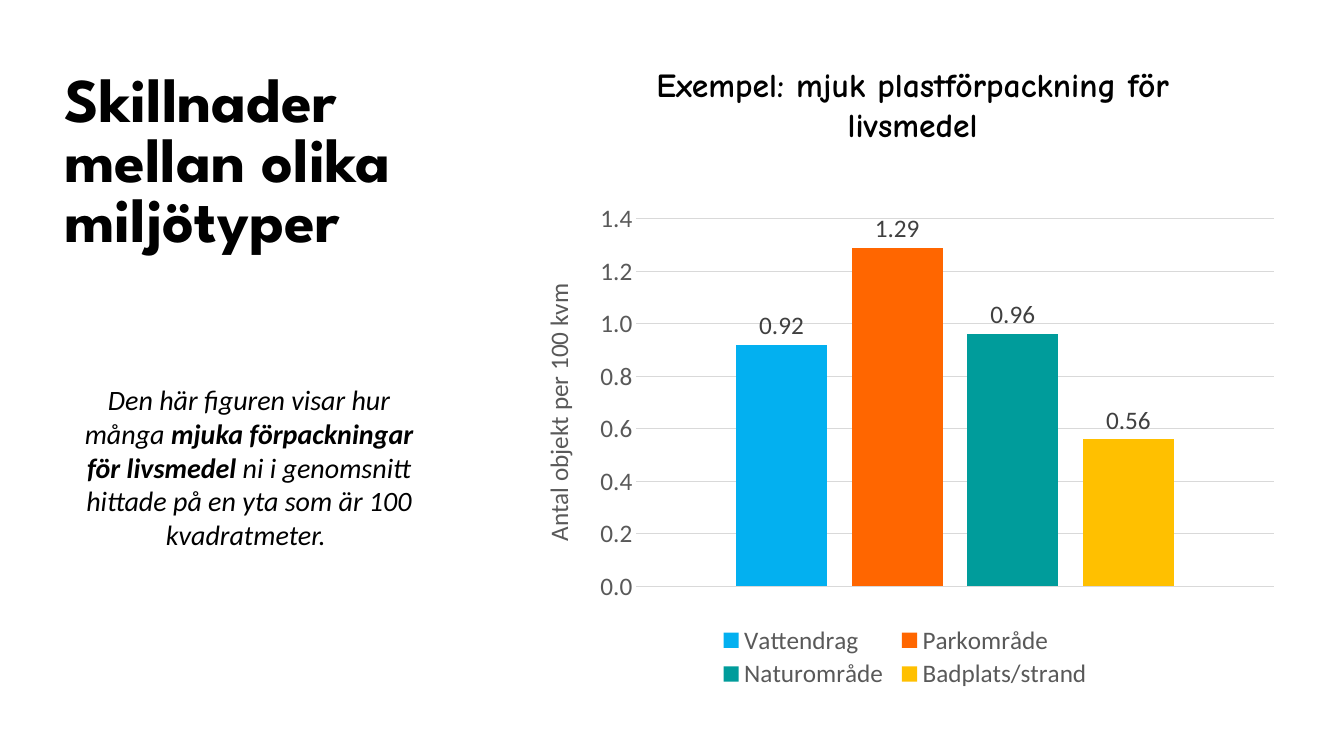
"""Build the slide on differences between environment types."""
from dataclasses import dataclass

from lxml import etree
from pptx import Presentation
from pptx.chart.data import CategoryChartData
from pptx.dml.color import RGBColor
from pptx.enum.chart import XL_CHART_TYPE, XL_LABEL_POSITION, XL_LEGEND_POSITION, XL_TICK_MARK
from pptx.enum.text import MSO_ANCHOR, MSO_AUTO_SIZE, PP_ALIGN
from pptx.oxml.ns import qn
from pptx.util import Pt

COLUMNS = XL_CHART_TYPE.COLUMN_CLUSTERED
ABOVE_BAR = XL_LABEL_POSITION.OUTSIDE_END
LEGEND_BELOW = XL_LEGEND_POSITION.BOTTOM
NO_TICKS = XL_TICK_MARK.NONE
LEFT, CENTER = PP_ALIGN.LEFT, PP_ALIGN.CENTER
TOP, BOTTOM = MSO_ANCHOR.TOP, MSO_ANCHOR.BOTTOM
FIXED, GROW = MSO_AUTO_SIZE.NONE, MSO_AUTO_SIZE.SHAPE_TO_FIT_TEXT

BLACK = RGBColor(0x00, 0x00, 0x00)
AXIS_GRAY = RGBColor(0x59, 0x59, 0x59)
LABEL_GRAY = RGBColor(0x40, 0x40, 0x40)
GRID_GRAY = RGBColor(0xD9, 0xD9, 0xD9)
BLUE = RGBColor(0x03, 0xB0, 0xF0)
ORANGE = RGBColor(0xFF, 0x66, 0x00)
TEAL = RGBColor(0x00, 0x9C, 0x9B)
YELLOW = RGBColor(0xFF, 0xC0, 0x00)


@dataclass(frozen=True)
class Box:
    left: float
    top: float
    width: float
    height: float

    def points(self):
        return Pt(self.left), Pt(self.top), Pt(self.width), Pt(self.height)


@dataclass(frozen=True)
class Environment:
    name: str
    density: float
    color: RGBColor


ENVIRONMENTS = (
    Environment("Vattendrag", 0.92, BLUE),
    Environment("Parkområde", 1.29, ORANGE),
    Environment("Naturområde", 0.96, TEAL),
    Environment("Badplats/strand", 0.56, YELLOW),
)


def style_font(font, name="Calibri", size=18, color=BLACK, bold=False, italic=False) -> None:
    font.name = name
    font.size = Pt(size)
    font.color.rgb = color
    font.bold = bold
    font.italic = italic


def add_text(slide, box: Box, text: str, *, name: str, size: float, emphasis: str = "",
             bold=False, italic=False, align=CENTER, anchor=TOP, fit=GROW, spacing=1.0) -> None:
    shape = slide.shapes.add_textbox(*box.points())
    frame = shape.text_frame
    frame.word_wrap = True
    frame.auto_size = fit
    frame.vertical_anchor = anchor
    paragraph = frame.paragraphs[0]
    paragraph.alignment = align
    paragraph.line_spacing = spacing
    before, found, after = text.partition(emphasis) if emphasis else (text, "", "")
    for part, strong in ((before, bold), (found, True), (after, bold)):
        if part:
            run = paragraph.add_run()
            run.text = part
            style_font(run.font, name, size, bold=strong, italic=italic)


def set_layout(element, **settings) -> None:
    for old in element.findall(qn("c:layout")):
        element.remove(old)
    layout = etree.Element(qn("c:layout"))
    manual = etree.SubElement(layout, qn("c:manualLayout"))
    for tag, value in settings.items():
        etree.SubElement(manual, qn(f"c:{tag}")).set("val", str(value))
    overlay = element.find(qn("c:overlay"))
    if overlay is None:
        element.insert(0, layout)
    else:
        overlay.addprevious(layout)


def style_value_axis(axis) -> None:
    axis.minimum_scale, axis.maximum_scale, axis.major_unit = 0, 1.4, 0.2
    axis.major_tick_mark = axis.minor_tick_mark = NO_TICKS
    axis.format.line.fill.background()
    grid = axis.major_gridlines.format.line
    grid.color.rgb = GRID_GRAY
    grid.width = Pt(0.75)
    labels = axis.tick_labels
    labels.number_format = "0.0"
    labels.number_format_is_linked = False
    style_font(labels.font, color=AXIS_GRAY)
    paragraph = axis.axis_title.text_frame.paragraphs[0]
    run = paragraph.add_run()
    run.text = "Antal objekt per 100 kvm"
    style_font(run.font, color=AXIS_GRAY)


def add_density_chart(slide, box: Box) -> None:
    data = CategoryChartData(number_format="0.00")
    data.categories = ["1"]
    for environment in ENVIRONMENTS:
        data.add_series(environment.name, [environment.density])
    chart = slide.shapes.add_chart(COLUMNS, *box.points(), data).chart
    chart.has_title = False
    style_font(chart.font)
    chart.category_axis.visible = False
    style_value_axis(chart.value_axis)

    plot = chart.plots[0]
    plot.vary_by_categories = False
    plot.gap_width, plot.overlap = 219, -27
    for series, environment in zip(plot.series, ENVIRONMENTS):
        series.format.fill.solid()
        series.format.fill.fore_color.rgb = environment.color
        labels = series.data_labels
        labels.show_value = True
        labels.position = ABOVE_BAR
        labels.number_format = "0.00"
        labels.number_format_is_linked = False
        style_font(labels.font, color=LABEL_GRAY)

    chart.has_legend = True
    chart.legend.position = LEGEND_BELOW
    chart.legend.include_in_layout = False
    style_font(chart.legend.font, color=AXIS_GRAY)

    plot_area = chart.element.find(".//" + qn("c:plotArea"))
    axis_title = plot_area.find(".//" + qn("c:title"))
    body = axis_title.find(".//" + qn("a:bodyPr"))
    body.set("rot", "-5400000")
    body.set("vert", "horz")
    set_layout(plot_area, layoutTarget="inner", xMode="edge", yMode="edge",
               x=0.15, y=0.05, w=0.83, h=0.73)
    set_layout(axis_title, xMode="edge", yMode="edge", x=0.02, y=0.17)
    set_layout(chart.element.find(".//" + qn("c:legend")), xMode="edge", yMode="edge",
               x=0.25, y=0.85, w=0.5, h=0.14)


def main() -> None:
    presentation = Presentation()
    presentation.slide_width, presentation.slide_height = Pt(960), Pt(540)
    slide = presentation.slides.add_slide(presentation.slide_layouts[6])
    add_text(slide, Box(415.4, 41.8, 473, 65.5), "Exempel: mjuk plastförpackning för livsmedel",
             name="Comic Neue", size=24, bold=True)
    add_text(slide, Box(52.6, 270, 250.6, 128.2),
             "Den här figuren visar hur många mjuka förpackningar för livsmedel "
             "ni i genomsnitt hittade på en yta som är 100 kvadratmeter. ",
             name="Calibri", size=20, italic=True, emphasis="mjuka förpackningar för livsmedel")
    add_text(slide, Box(38.9, 49.7, 333.4, 135.4), "Skillnader mellan olika miljötyper",
             name="League Spartan", size=44.4, bold=True, align=LEFT, anchor=BOTTOM,
             fit=FIXED, spacing=0.8)
    add_density_chart(slide, Box(372.2, 138.2, 548.6, 360))
    presentation.save("out.pptx")


if __name__ == "__main__":
    main()
